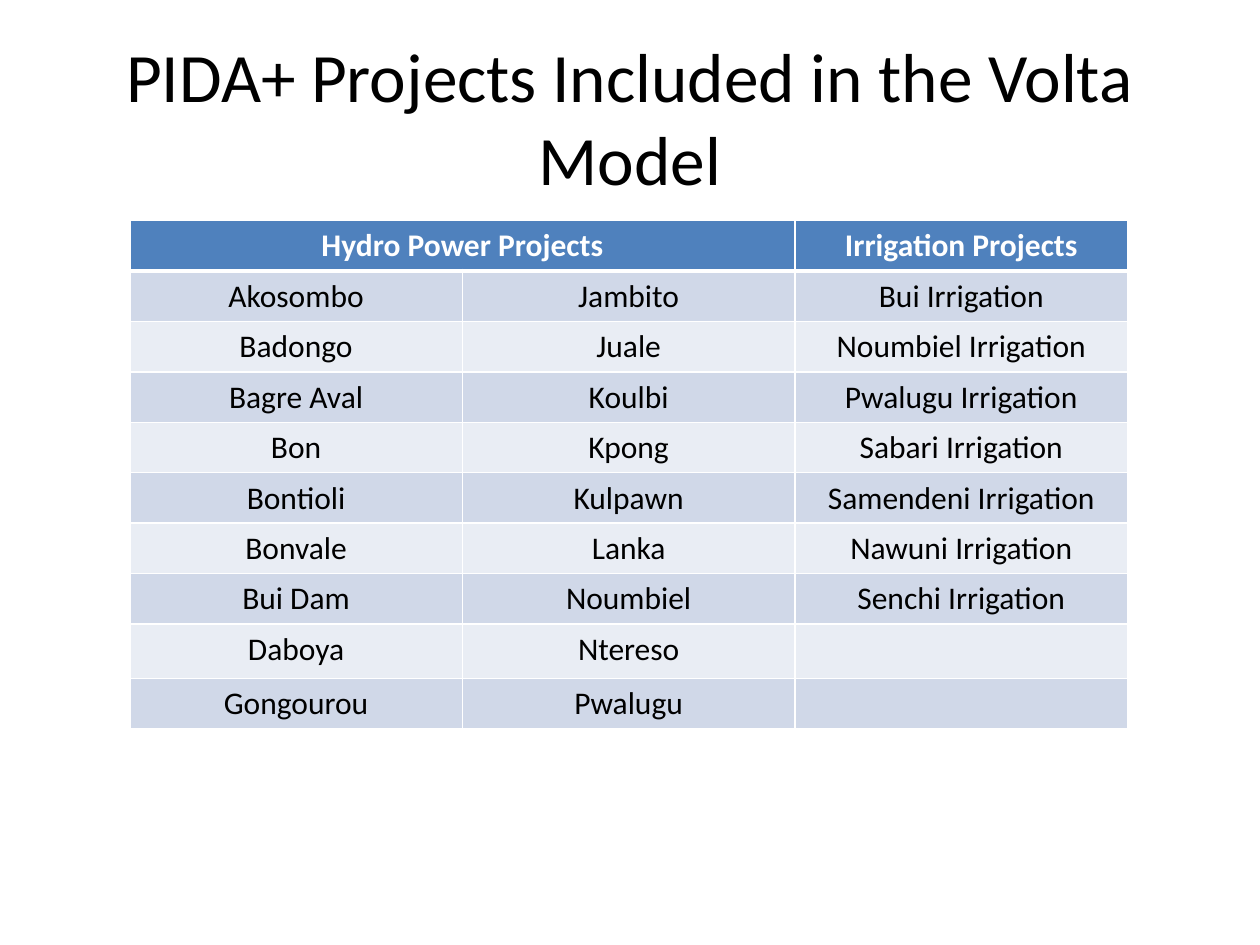
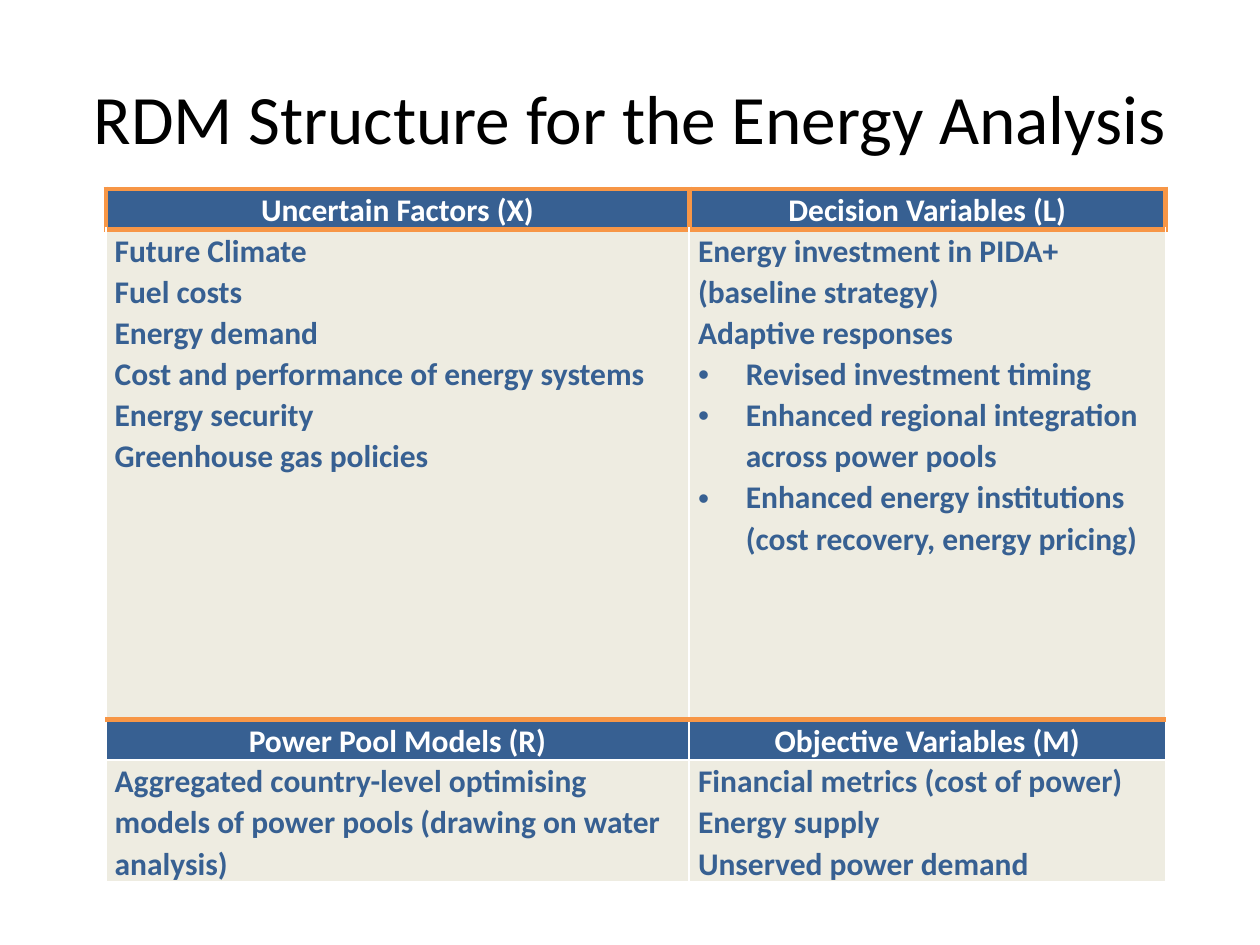
import pptx
import pptx.dml.color
import pptx.enum.text
import pptx.oxml.ns
import pptx.util
from lxml import etree

Inches = pptx.util.Inches
Pt = pptx.util.Pt
RGBColor = pptx.dml.color.RGBColor
Align = pptx.enum.text.PP_ALIGN
Anchor = pptx.enum.text.MSO_ANCHOR
qn = pptx.oxml.ns.qn

FONT = "Calibri"
BLACK = RGBColor(0x00, 0x00, 0x00)
WHITE = RGBColor(0xFF, 0xFF, 0xFF)
BLUE = RGBColor(0x4F, 0x81, 0xBD)
BANDS = (RGBColor(0xD0, 0xD8, 0xE8), RGBColor(0xE9, 0xED, 0xF4))
NAVY = RGBColor(0x37, 0x60, 0x92)
CREAM = RGBColor(0xEE, 0xEC, 0xE1)
ORANGE = RGBColor(0xF7, 0x96, 0x46)
THIN_WHITE = (WHITE, 1)
THICK_WHITE = (WHITE, 3)
THICK_ORANGE = (ORANGE, 3)

PROJECTS = [
    ("Akosombo", "Jambito", "Bui Irrigation"),
    ("Badongo", "Juale", "Noumbiel Irrigation"),
    ("Bagre Aval", "Koulbi", "Pwalugu Irrigation"),
    ("Bon", "Kpong", "Sabari Irrigation"),
    ("Bontioli", "Kulpawn", "Samendeni Irrigation"),
    ("Bonvale", "Lanka", "Nawuni Irrigation"),
    ("Bui Dam", "Noumbiel", "Senchi Irrigation"),
    ("Daboya", "Ntereso", ""),
    ("Gongourou", "Pwalugu", ""),
]

RDM_HEADINGS = [
    ("Uncertain Factors (X)", "Decision Variables (L)"),
    ("Power Pool Models (R)", "Objective Variables (M)"),
]
RDM_CONTENTS = [
    (
        ["Future Climate", "Fuel costs", "Energy demand",
         "Cost and performance of energy systems", "Energy security",
         "Greenhouse gas policies"],
        ["Energy investment in PIDA+ (baseline strategy)", "Adaptive responses",
         "• Revised investment timing",
         "• Enhanced regional integration across power pools",
         "• Enhanced energy institutions (cost recovery, energy pricing)"],
    ),
    (
        ["Aggregated country-level optimising models of power pools "
         "(drawing on water analysis)"],
        ["Financial metrics (cost of power)", "Energy supply",
         "Unserved power demand"],
    ),
]


def write_paragraph(para, text, size=18, color=BLACK, bold=False,
                    align=Align.LEFT, spacing=None):
    """Fill a paragraph, turning a leading bullet sign into a real bullet."""
    para.alignment = align
    if spacing:
        para.line_spacing = spacing
    if text.startswith("• "):
        text = text[2:]
        properties = para._p.get_or_add_pPr()
        properties.set("marL", str(Inches(0.38)))
        properties.set("indent", str(-Inches(0.38)))
        etree.SubElement(properties, qn("a:buFont"), typeface="Arial")
        etree.SubElement(properties, qn("a:buChar"), char="•")
    para.font.size = Pt(size)
    if text:
        span = para.add_run()
        span.text = text
        span.font.name = FONT
        span.font.size = Pt(size)
        span.font.bold = bold
        span.font.color.rgb = color


def add_title(page, text):
    """Add the centred slide title."""
    box = page.shapes.add_textbox(Inches(0.5), Inches(0.3), Inches(9), Inches(1.25))
    frame = box.text_frame
    frame.word_wrap = True
    frame.vertical_anchor = Anchor.MIDDLE
    write_paragraph(frame.paragraphs[0], text, size=39.6, align=Align.CENTER)


def add_grid(page, left, top, widths, heights):
    """Add an empty table with the given column widths and row heights."""
    table = page.shapes.add_table(
        len(heights), len(widths), Inches(left), Inches(top),
        Inches(sum(widths)), Inches(sum(heights))).table
    for column, width in zip(table.columns, widths):
        column.width = Inches(width)
    for row, height in zip(table.rows, heights):
        row.height = Inches(height)
    return table


def set_borders(cell, sides=THIN_WHITE, top=THIN_WHITE, bottom=THIN_WHITE):
    """Draw the four borders of a cell, each a colour and a width."""
    properties = cell._tc.get_or_add_tcPr()
    for tag, (color, width) in zip(("lnL", "lnR", "lnT", "lnB"),
                                   (sides, sides, top, bottom)):
        line = etree.SubElement(properties, qn("a:" + tag), w=str(Pt(width)))
        fill = etree.SubElement(line, qn("a:solidFill"))
        etree.SubElement(fill, qn("a:srgbClr"), val=str(color))


def write_cell(cell, texts, fill, borders=None, tight=False, **style):
    """Give a cell its borders, fill and paragraphs."""
    set_borders(cell, **(borders or {}))
    cell.fill.solid()
    cell.fill.fore_color.rgb = fill
    if tight:
        cell.margin_left = cell.margin_right = Inches(0.07)
        cell.margin_top = cell.margin_bottom = 0
    frame = cell.text_frame
    for index, text in enumerate(texts):
        para = frame.add_paragraph() if index else frame.paragraphs[0]
        write_paragraph(para, text, **style)


def add_project_table(page):
    """Add the banded list of hydro power and irrigation projects."""
    heights = [0.4] * 8 + [0.43, 0.4]
    table = add_grid(page, 1.03, 1.75, [2.64] * 3, heights)
    for column, heading in enumerate(("Hydro Power Projects", "", "Irrigation Projects")):
        write_cell(table.cell(0, column), [heading], BLUE, {"bottom": THICK_WHITE},
                   color=WHITE, bold=True, align=Align.CENTER)
    table.cell(0, 0).merge(table.cell(0, 1))
    for row, names in enumerate(PROJECTS, start=1):
        borders = {"top": THICK_WHITE if row == 1 else THIN_WHITE}
        for column, name in enumerate(names):
            write_cell(table.cell(row, column), [name], BANDS[(row - 1) % 2],
                       borders, align=Align.CENTER)


def add_rdm_table(page):
    """Add the two by two matrix of headings and their contents."""
    table = add_grid(page, 0.84, 1.5, [4.63, 3.78], [0.26, 3.89, 0.28, 0.91])
    heading_borders = (
        {"sides": THICK_ORANGE, "top": THICK_ORANGE, "bottom": THICK_ORANGE},
        {"top": THICK_ORANGE},
    )
    content_borders = ({"top": THICK_ORANGE, "bottom": THICK_ORANGE}, {})
    shared = {"tight": True, "bold": True, "spacing": 1.07}
    for block in range(2):
        for column in range(2):
            write_cell(table.cell(2 * block, column), [RDM_HEADINGS[block][column]],
                       NAVY, heading_borders[block], color=WHITE,
                       align=Align.CENTER, **shared)
            write_cell(table.cell(2 * block + 1, column), RDM_CONTENTS[block][column],
                       CREAM, content_borders[block], color=NAVY, **shared)


def main():
    """Build and save both slides."""
    deck = pptx.Presentation()
    deck.slide_width = Inches(10)
    deck.slide_height = Inches(7.5)
    for title, add_table in (
        ("PIDA+ Projects Included in the Volta Model", add_project_table),
        ("RDM Structure for the Energy Analysis", add_rdm_table),
    ):
        page = deck.slides.add_slide(deck.slide_layouts[6])
        add_title(page, title)
        add_table(page)
    deck.save("out.pptx")


if __name__ == "__main__":
    main()
